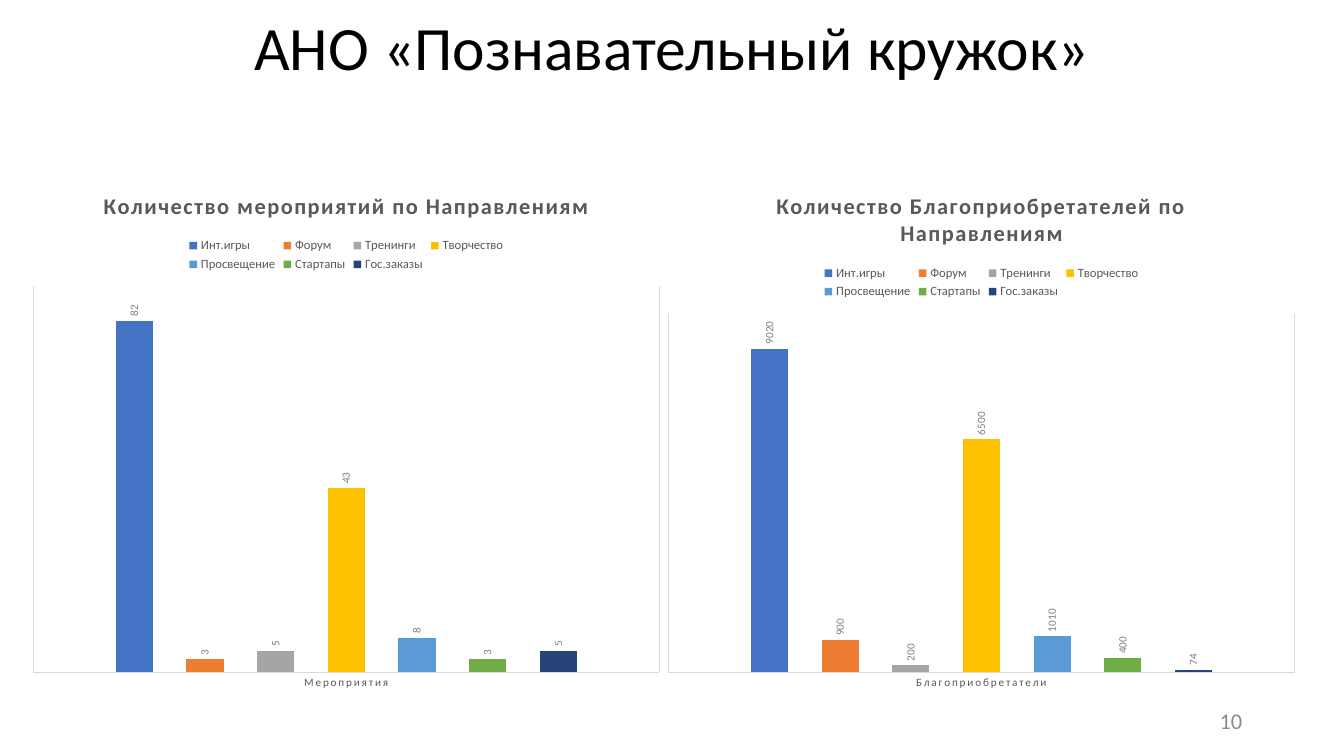
from pptx import Presentation
from pptx.chart.data import CategoryChartData
from pptx.dml.color import RGBColor
from pptx.enum.chart import XL_CHART_TYPE, XL_LABEL_POSITION, XL_LEGEND_POSITION, XL_TICK_LABEL_POSITION, XL_TICK_MARK
from pptx.enum.text import MSO_ANCHOR, PP_ALIGN
from pptx.util import Inches, Pt

COLUMN = XL_CHART_TYPE.COLUMN_CLUSTERED
OUTER = XL_LABEL_POSITION.OUTSIDE_END
TOP = XL_LEGEND_POSITION.TOP
LOW = XL_TICK_LABEL_POSITION.NEXT_TO_AXIS
NO_TICK = XL_TICK_MARK.NONE
MIDDLE = MSO_ANCHOR.MIDDLE
CENTER, RIGHT = PP_ALIGN.CENTER, PP_ALIGN.RIGHT

WIDTH, HEIGHT = 13.33, 7.5
FACE = "Calibri"
GRAY, PALE = "595959", "D9D9D9"
FIELDS = {
    "Инт.игры": "4472C4",
    "Форум": "ED7D31",
    "Тренинги": "A5A5A5",
    "Творчество": "FFC000",
    "Просвещение": "5B9BD5",
    "Стартапы": "70AD47",
    "Гос.заказы": "264478",
}
CHARTS = [
    ("Количество мероприятий по Направлениям", "Мероприятия",
     [82, 3, 5, 43, 8, 3, 5], 90),
    ("Количество Благоприобретателей по Направлениям", "Благоприобретатели",
     [9020, 900, 200, 6500, 1010, 400, 74], 10000),
]


def paint(target, color):
    target.rgb = RGBColor.from_string(color)


def style(font, size, color, bold=False):
    font.name, font.size, font.bold = FACE, Pt(size), bold
    paint(font.color, color)


def rule(line):
    line.width = Pt(0.75)
    line.fill.solid()
    paint(line.color, PALE)


def write(slide, box, text, size, color, align, spacing=1.0):
    frame = slide.shapes.add_textbox(*map(Inches, box)).text_frame
    frame.word_wrap = True
    frame.vertical_anchor = MIDDLE
    par = frame.paragraphs[0]
    par.alignment, par.line_spacing = align, spacing
    run = par.add_run()
    run.text = text
    style(run.font, size, color)


def draw_head(chart, text):
    chart.has_title = True
    chart.chart_title.include_in_layout = False
    run = chart.chart_title.text_frame.paragraphs[0].add_run()
    run.text = text
    style(run.font, 16, GRAY, bold=True)
    run.font._element.set("spc", "120")


def draw_axes(chart, peak):
    cat, val = chart.category_axis, chart.value_axis
    cat.major_tick_mark = cat.minor_tick_mark = NO_TICK
    cat.tick_label_position = LOW
    style(cat.tick_labels.font, 8, GRAY)
    cat.tick_labels.font._element.set("spc", "120")
    rule(cat.format.line)
    cat.has_major_gridlines = True
    rule(cat.major_gridlines.format.line)
    val.has_major_gridlines = False
    val.minimum_scale, val.maximum_scale = 0, peak
    val.visible = False


def draw_bars(plot):
    plot.gap_width, plot.overlap = 444, -90
    plot.vary_by_categories = False
    for bar, color in zip(plot.series, FIELDS.values()):
        bar.format.fill.solid()
        paint(bar.format.fill.fore_color, color)
        bar.invert_if_negative = False
        labels = bar.data_labels
        labels.show_value = True
        labels.position = OUTER
        style(labels.font, 8, "808080")
        turn = labels._element.find(".//{*}bodyPr")
        turn.set("rot", "-5400000")
        turn.set("vert", "horz")


def draw_chart(slide, box, title, group, values, peak):
    data = CategoryChartData()
    data.categories = [group]
    for name, value in zip(FIELDS, values):
        data.add_series(name, [value])
    chart = slide.shapes.add_chart(COLUMN, *map(Inches, box), data).chart
    style(chart.font, 10, "000000")
    draw_head(chart, title)
    chart.has_legend = True
    chart.legend.position = TOP
    chart.legend.include_in_layout = False
    style(chart.legend.font, 9, GRAY)
    draw_axes(chart, peak)
    draw_bars(chart.plots[0])


def main():
    deck = Presentation()
    deck.slide_width, deck.slide_height = Inches(WIDTH), Inches(HEIGHT)
    slide = deck.slides.add_slide(deck.slide_layouts[6])
    write(slide, (1.16, 0.1, 11.02, 0.81), "АНО «Познавательный кружок»",
          size=44, color="000000", align=CENTER, spacing=0.9)
    for col, parts in enumerate(CHARTS):
        draw_chart(slide, (0.2 + 6.3 * col, 1.69, 6.47, 5.26), *parts)
    write(slide, (9.42, 6.95, 3, 0.4), "10",
          size=16, color="8C8C8C", align=RIGHT)
    deck.save("out.pptx")


if __name__ == "__main__":
    main()
